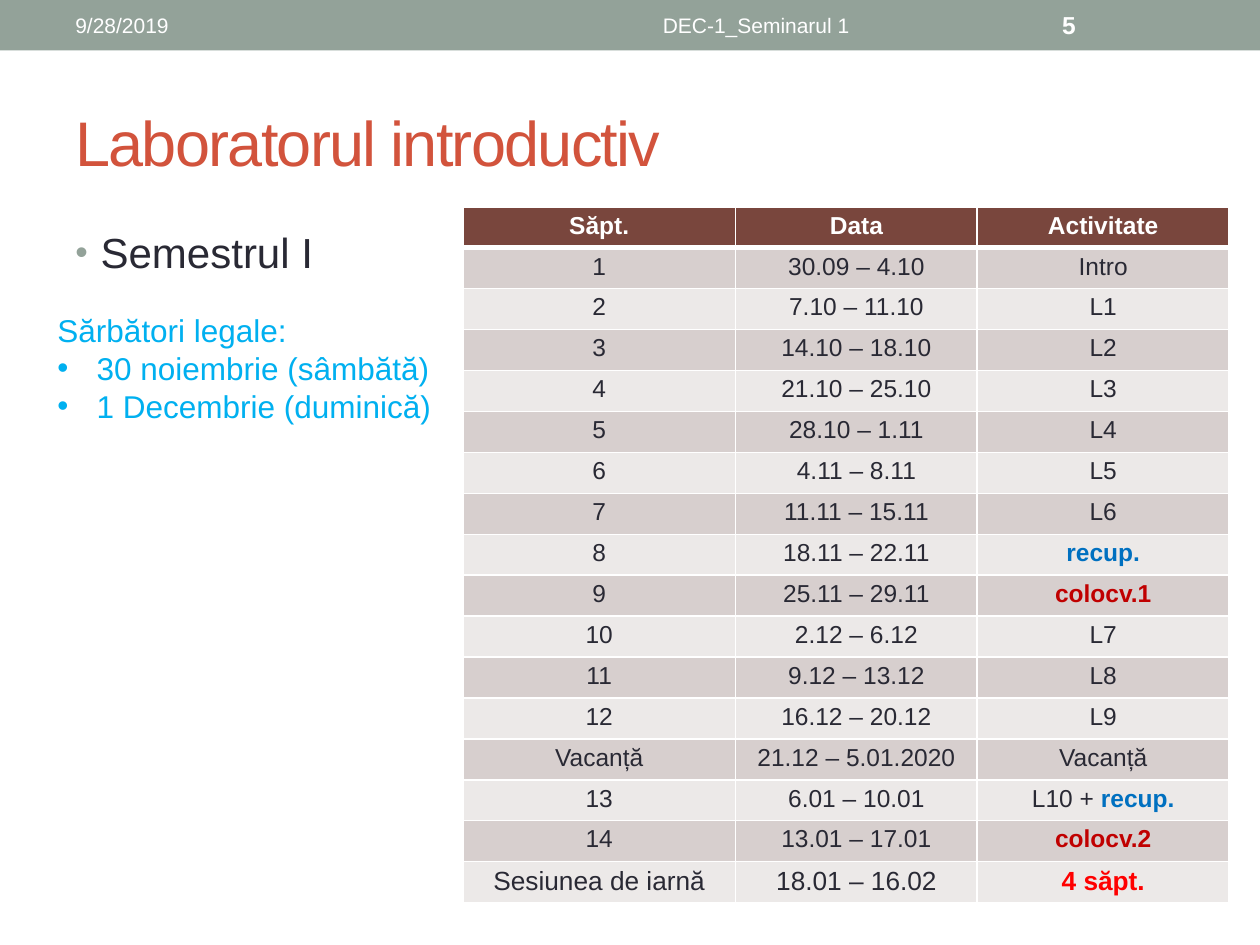
from lxml.etree import SubElement
from pptx import Presentation
from pptx.dml.color import RGBColor
from pptx.enum.shapes import MSO_SHAPE as SHAPE
from pptx.enum.text import MSO_ANCHOR as ANCHOR, PP_ALIGN as ALIGN
from pptx.oxml.ns import qn
from pptx.util import Cm, Pt

rgb = RGBColor.from_string
DARK, WHITE, SAGE, SKY = "292934", "FFFFFF", "93A299", "00B0F0"
BLUE, CRIMSON, RED = "0070C0", "C00000", "FF0000"


def write(p, text, size=14, color=DARK, bold=False, align=ALIGN.LEFT,
          spacing=0, bullet=None, bullet_size=100, indent=0):
    """Add a run to p; bullet is the colour of the bullet, if there is one."""
    p.alignment = align
    r = p.add_run()
    r.text = text
    r.font.name, r.font.size, r.font.bold = "Arial", Pt(size), bold
    r.font.color.rgb = rgb(color)
    if spacing:
        r.font._element.set("spc", str(spacing * 100))
    if bullet:
        pPr = p._p.get_or_add_pPr()
        pPr.set("marL", str(Cm(indent)))
        pPr.set("indent", str(-Cm(indent)))
        clr = SubElement(pPr, qn("a:buClr"))
        SubElement(clr, qn("a:srgbClr")).set("val", bullet)
        SubElement(pPr, qn("a:buSzPct")).set("val", str(bullet_size * 1000))
        SubElement(pPr, qn("a:buFont")).set("typeface", "Arial")
        SubElement(pPr, qn("a:buChar")).set("char", "•")


def add_box(s, left, top, width, height, anchor=ANCHOR.TOP):
    tf = s.shapes.add_textbox(Cm(left), Cm(top), Cm(width), Cm(height)).text_frame
    tf.word_wrap = True
    tf.vertical_anchor = anchor
    return tf


prs = Presentation()
prs.slide_width, prs.slide_height = Cm(25.4), Cm(19.05)
s = prs.slides.add_slide(prs.slide_layouts[6])

# Top band with date, footer and slide number
band = s.shapes.add_shape(SHAPE.RECTANGLE, 0, 0, prs.slide_width, Cm(1.02))
band.shadow.inherit = False
band.fill.solid()
band.fill.fore_color.rgb = rgb(SAGE)
band.line.fill.background()

for left, width, text, size, bold, align in [
    (1.27, 8.05, "9/28/2019", 12, False, ALIGN.LEFT),
    (9.53, 11.43, "DEC-1_Seminarul 1", 12, False, ALIGN.CENTER),
    (21.16, 2.97, "5", 14, True, ALIGN.LEFT),
]:
    tf = add_box(s, left, 0.05, width, 0.91, ANCHOR.MIDDLE)
    write(tf.paragraphs[0], text, size=size, color=WHITE, bold=bold, align=align)

# Title
tf = add_box(s, 1.27, 1.47, 22.86, 2.74, ANCHOR.MIDDLE)
write(tf.paragraphs[0], "Laboratorul introductiv", size=36, color="D2533C", spacing=-1)

# Semester
tf = add_box(s, 1.27, 4.45, 22.86, 13.54)
p = tf.paragraphs[0]
p.space_before = Pt(4.8)
write(p, "Semestrul I", size=24, bullet=SAGE, bullet_size=85, indent=0.51)

# Timetable: a plain string, or a list of (text, colour) for marked activities
rows = [
    ("Săpt.", "Data", "Activitate"),
    ("1", "30.09 – 4.10", "Intro"),
    ("2", "7.10 – 11.10", "L1"),
    ("3", "14.10 – 18.10", "L2"),
    ("4", "21.10 – 25.10", "L3"),
    ("5", "28.10 – 1.11", "L4"),
    ("6", "4.11 – 8.11", "L5"),
    ("7", "11.11 – 15.11", "L6"),
    ("8", "18.11 – 22.11", [("recup.", BLUE)]),
    ("9", "25.11 – 29.11", [("colocv.1", CRIMSON)]),
    ("10", "2.12 – 6.12", "L7"),
    ("11", "9.12 – 13.12", "L8"),
    ("12", "16.12 – 20.12", "L9"),
    ("Vacanță", "21.12 – 5.01.2020", "Vacanță"),
    ("13", "6.01 – 10.01", [("L10 + ", DARK), ("recup.", BLUE)]),
    ("14", "13.01 – 17.01", [("colocv.2", CRIMSON)]),
    ("Sesiunea de iarnă", "18.01 – 16.02", [("4 săpt.", RED)]),
]
last = len(rows) - 1
table = s.shapes.add_table(len(rows), 3, Cm(9.33), Cm(4.17), Cm(15.45), Cm(14.04)).table
for col, width in zip(table.columns, (5.5, 4.87, 5.08)):
    col.width = Cm(width)

for i, row in enumerate(rows):
    fill = "79463D" if i == 0 else "D7CFCE" if i % 2 else "ECE9E8"
    for j, content in enumerate(row):
        cell = table.cell(i, j)
        cell.margin_left = cell.margin_right = Cm(0.2)
        cell.margin_top = cell.margin_bottom = Cm(0.1)
        # Borders come before the fill in the cell properties
        tcPr = cell._tc.get_or_add_tcPr()
        for side in "LRTB":
            thick = (i, side) in ((0, "B"), (1, "T"))
            ln = SubElement(tcPr, qn(f"a:ln{side}"), w=str(Pt(3 if thick else 1)))
            SubElement(SubElement(ln, qn("a:solidFill")), qn("a:srgbClr")).set("val", WHITE)
        cell.fill.solid()
        cell.fill.fore_color.rgb = rgb(fill)
        base = WHITE if i == 0 else DARK
        runs = [(content, base)] if isinstance(content, str) else content
        for text, color in runs:
            write(cell.text_frame.paragraphs[0], text, size=15 if i == last else 14,
                  color=color, bold=color != DARK, align=ALIGN.CENTER)

# Public holidays
tf = add_box(s, 0.91, 6.15, 8.05, 2.57)
write(tf.paragraphs[0], "Sărbători legale:", size=18, color=SKY)
for text in ("30 noiembrie (sâmbătă)", "1 Decembrie (duminică)"):
    write(tf.add_paragraph(), text, size=18, color=SKY, bullet=SKY, indent=0.79)

prs.save("out.pptx")
